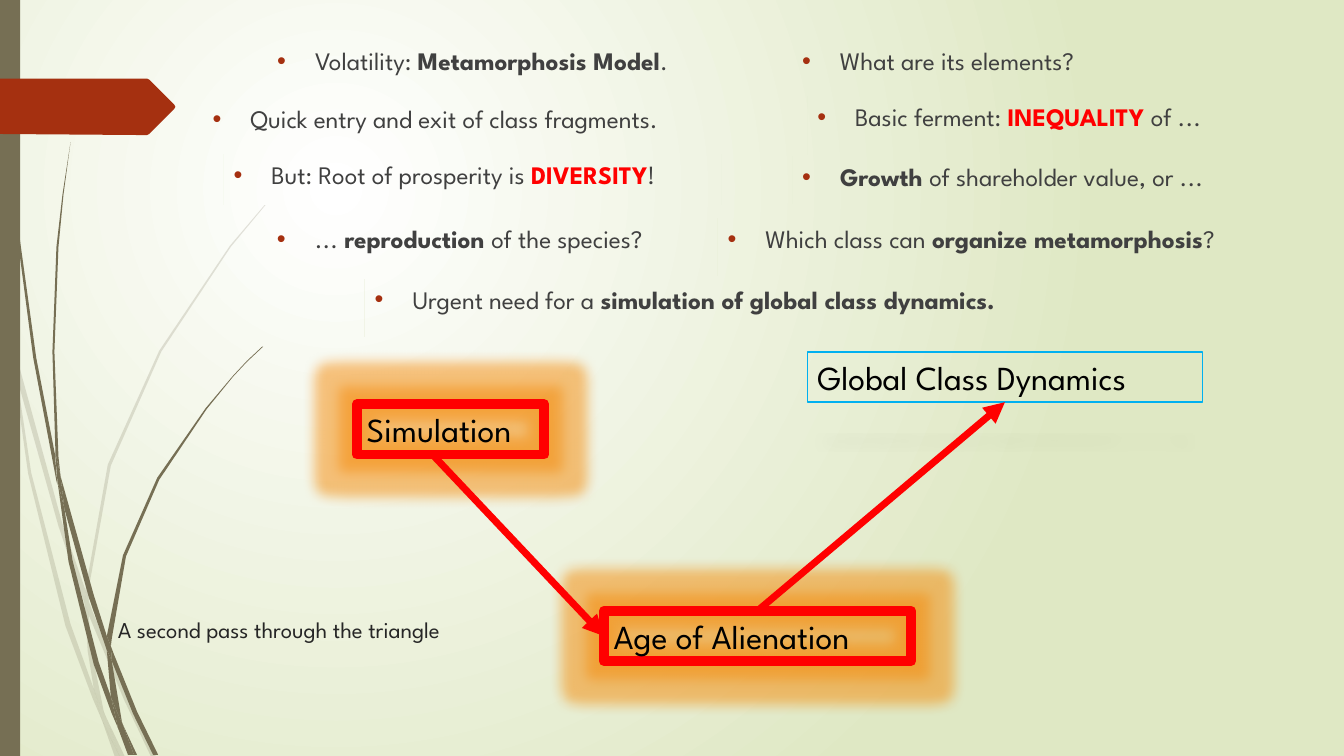
"""Build the class dynamics slide with its bullets, boxes and arrows."""
from dataclasses import dataclass

from pptx import Presentation
from pptx.dml.color import RGBColor
from pptx.enum.shapes import MSO_CONNECTOR, MSO_SHAPE
from pptx.enum.text import MSO_ANCHOR, MSO_AUTO_SIZE, PP_ALIGN
from pptx.oxml import parse_xml
from pptx.oxml.ns import nsdecls
from pptx.util import Pt

STRAIGHT = MSO_CONNECTOR.STRAIGHT
RECT = MSO_SHAPE.RECTANGLE
TOP = MSO_ANCHOR.TOP
LEFT = PP_ALIGN.LEFT
NO_FIT = MSO_AUTO_SIZE.NONE
GROW = MSO_AUTO_SIZE.SHAPE_TO_FIT_TEXT


@dataclass(frozen=True)
class Theme:
    font: str = "League Spartan"
    title: float = 16.2
    body: float = 18
    label: float = 24
    head: str = "262626"
    text: str = "404040"
    black: str = "000000"
    red: str = "FF0000"
    blue: str = "00B0F0"
    rust: str = "A53010"
    olive: str = "766F54"
    white: str = "FFFFFF"
    green: str = "DFE8C4"
    glow: str = "F58A0A"
    gold: str = "FFC000"


THEME = Theme()

LEAD = (190.8, 28.8, 343.4, 38.9), [("Volatility: ", ""), ("Metamorphosis Model", "b"), (".", "")]

PLAIN = [
    ((565.9, 28.8, 334.1, 41), [("What are its elements?", "")]),
    ((144.7, 70.6, 389.5, 33.1), [("Quick entry and exit of class fragments.", "")]),
]

COVER = [
    ((576.7, 69.1, 323.3, 41), [("Basic ferment: ", ""), ("INEQUALITY ", "br"), ("of ...", "")]),
    ((159.8, 110.2, 355.7, 36), [("But: Root of prosperity is ", ""), ("DIVERSITY", "br"), ("!", "")]),
    ((565.9, 111.6, 346.3, 33.8), [("Growth ", "b"), ("of shareholder value, or ...", "")]),
    ((190.8, 156.2, 328.3, 36), [("... ", ""), ("reproduction ", "b"), ("of the species?", "")]),
    ((512.6, 156.2, 440.6, 41), [("Which class can ", ""), ("organize metamorphosis", "b"), ("?", "")]),
    ((260.6, 199.4, 589, 41), [("Urgent need for a ", ""), ("simulation of global class dynamics.", "b")]),
]

UNIT = Pt(0.72)
PALE = [
    [(11, 350), (9, 322), (0, 282), (0, 299), (10, 344)],
    [(58, 522), (84, 599), (85, 586), (62, 520), (14, 345), (17, 376)],
    [(92, 607), (88, 596), (88, 610), (123, 694), (150, 751), (155, 751), (127, 692)],
    [(119, 751), (124, 751), (105, 711)],
    [(93, 683), (70, 619), (31, 469), (17, 376), (11, 350), (28, 470), (65, 621), (92, 693), (101, 714), (99, 707)],
    [(84, 599), (87, 646), (93, 683), (96, 692), (105, 711), (103, 706), (91, 646), (88, 610), (88, 608)],
    [(88, 584), (110, 462), (160, 349), (229, 245), (268, 198), (290, 175), (312, 154), (312, 153), (289, 175),
     (268, 197), (228, 244), (158, 348), (107, 461), (85, 584), (85, 586), (88, 596)],
    [(101, 714), (114, 751), (119, 751)],
    [(88, 608), (88, 610), (88, 596), (85, 586), (84, 599)],
    [(96, 692), (93, 683), (99, 707), (101, 714), (119, 751), (105, 711)],
]
DARK = [
    [(7, 110), (17, 233), (33, 355), (56, 477), (57, 481), (55, 457), (55, 453), (36, 355), (19, 232), (8, 109),
     (5, 48), (4, 0), (3, 0), (4, 48)],
    [(88, 592), (106, 645), (106, 633), (106, 631), (93, 590), (60, 472), (64, 505)],
    [(113, 649), (110, 641), (111, 656), (132, 708), (152, 749), (157, 749), (136, 706)],
    [(110, 691), (98, 657), (72, 556), (64, 505), (57, 477), (68, 557), (93, 659), (111, 708), (117, 722), (116, 717)],
    [(60, 472), (58, 453), (54, 349), (58, 245), (63, 193), (70, 141), (62, 193), (56, 245), (52, 349), (55, 449)],
    [(133, 749), (136, 749), (122, 719)],
    [(57, 477), (64, 505), (60, 472), (55, 449), (55, 453)],
    [(111, 633), (125, 552), (158, 476), (205, 406), (231, 374), (245, 359), (261, 344), (260, 344), (245, 358),
     (231, 373), (204, 405), (156, 474), (122, 551), (106, 631), (110, 641)],
    [(117, 722), (127, 749), (131, 749)],
    [(106, 645), (110, 691), (116, 706), (122, 719), (121, 716), (111, 656), (109, 651)],
    [(106, 645), (109, 651), (111, 656), (110, 641), (106, 631), (106, 633)],
    [(116, 706), (110, 691), (116, 717), (117, 722), (130, 749), (133, 749), (122, 719)],
]
TAG = [(0, 78), (146, 78), (148, 79), (173, 104), (174, 106), (173, 108), (148, 133), (146, 134), (136, 134), (0, 133)]


def rgb(hue):
    """Turn a hex string into a colour."""
    return RGBColor.from_string(hue)


def place(shape, box):
    """Move and size a shape, in points."""
    shape.left, shape.top, shape.width, shape.height = map(Pt, box)


def style(run, size, hue, bold=False):
    """Format one run."""
    run.font.name, run.font.size, run.font.bold = THEME.font, Pt(size), bold
    run.font.color.rgb = rgb(hue)


def paint(shape, hue, alpha=None):
    """Fill a shape flat, without line or shadow."""
    shape.shadow.inherit = False
    shape.fill.solid()
    shape.fill.fore_color.rgb = rgb(hue)
    shape.line.fill.background()
    if alpha:
        tint = shape._element.xpath("./p:spPr/a:solidFill/a:srgbClr")[0]
        tint.append(parse_xml(f'<a:alpha {nsdecls("a")} val="{alpha * 1000}"/>'))


def outline(shapes, dots, hue, alpha=None):
    """Draw a closed outline through the dots."""
    pen = shapes.build_freeform(*dots[0], scale=UNIT)
    pen.add_line_segments(dots[1:], close=True)
    paint(pen.convert_to_shape(), hue, alpha)


def backdrop(slide):
    """Give the slide its round gradient."""
    fill = slide.background.fill
    fill.gradient()
    for stop, hue in zip(fill.gradient_stops, (THEME.white, THEME.green)):
        stop.color.rgb = rgb(hue)
    lin = slide._element.xpath(".//p:bg//a:lin")[0]
    lin.getparent().replace(lin, parse_xml(
        f'<a:path {nsdecls("a")} path="circle">'
        '<a:fillToRect l="50000" t="50000" r="100000" b="100000"/></a:path>'))


def decor(slide):
    """Draw the wisps, the side bar and the tag."""
    for wisps, alpha in ((PALE, 20), (DARK, None)):
        group = slide.shapes.add_group_shape()
        for dots in wisps:
            outline(group.shapes, dots, THEME.olive, alpha)
    paint(slide.shapes.add_shape(RECT, 0, 0, Pt(14.4), Pt(540)), THEME.olive)
    outline(slide.shapes, TAG, THEME.rust)


def bullet(shape, parts):
    """Write one bulleted line of mixed runs."""
    frame = shape.text_frame
    frame.word_wrap, frame.auto_size, frame.vertical_anchor = True, NO_FIT, TOP
    para = frame.paragraphs[0]
    para.alignment, para.space_before = LEFT, Pt(10)
    props = para._p.get_or_add_pPr()
    props.set("marL", str(Pt(27)))
    props.set("indent", str(-Pt(27)))
    props.append(parse_xml(f'<a:buClr {nsdecls("a")}><a:srgbClr val="{THEME.rust}"/></a:buClr>'))
    props.append(parse_xml(f'<a:buFont {nsdecls("a")} typeface="Arial"/>'))
    props.append(parse_xml(f'<a:buChar {nsdecls("a")} char="•"/>'))
    for text, mark in parts:
        run = para.add_run()
        run.text = text
        style(run, THEME.body, THEME.red if "r" in mark else THEME.text, "b" in mark)


def point(slide, box, parts, cover=False):
    """Add a bullet box, filled with the backdrop if it covers."""
    shape = slide.shapes.add_textbox(*map(Pt, box))
    if cover:
        shape._element.set("useBgFill", "1")
        for bare in shape._element.xpath("./p:spPr/a:noFill"):
            bare.getparent().remove(bare)
    bullet(shape, parts)


def shade(hue, alpha, blur, dist, turn, extra=""):
    """Return the XML of an outer shadow."""
    return (f'<a:outerShdw blurRad="{Pt(blur)}" dist="{Pt(dist)}" dir="{turn * 60000}" {extra} rotWithShape="0">'
            f'<a:srgbClr val="{hue}"><a:alpha val="{alpha * 1000}"/></a:srgbClr></a:outerShdw>')


def label(slide, box, text, hue, width, effect):
    """Add a framed label with an effect."""
    shape = slide.shapes.add_textbox(*map(Pt, box))
    shape.line.color.rgb, shape.line.width = rgb(hue), Pt(width)
    shape._element.spPr.append(parse_xml(f'<a:effectLst {nsdecls("a")}>{effect}</a:effectLst>'))
    frame = shape.text_frame
    frame.text = text
    frame.word_wrap, frame.auto_size = False, GROW
    style(frame.paragraphs[0].runs[0], THEME.label, THEME.black)
    return shape


def arrow(slide, start, goal, side):
    """Draw a red arrow from a spot to a side of a label."""
    line = slide.shapes.add_connector(STRAIGHT, *map(Pt, start), 0, 0)
    line.end_connect(goal, side)
    line.line.color.rgb, line.line.width = rgb(THEME.red), Pt(5)
    line.line._get_or_add_ln().append(parse_xml(f'<a:tailEnd {nsdecls("a")} type="triangle"/>'))
    line._element.spPr.append(parse_xml(f'<a:effectLst {nsdecls("a")}/>'))
    return line


def main():
    """Build and save the slide."""
    deck = Presentation()
    deck.slide_width, deck.slide_height = Pt(960), Pt(540)
    slide = deck.slides.add_slide(deck.slide_layouts[1])
    backdrop(slide)
    decor(slide)

    title, body = slide.shapes.title, slide.placeholders[1]
    for holder in (title, body):
        slide.shapes._spTree.append(holder._element)
    place(title, (77, 436.3, 299.5, 38.9))
    frame = title.text_frame
    frame.text = "A second pass through the triangle"
    frame.vertical_anchor, frame.auto_size = TOP, NO_FIT
    frame.paragraphs[0].alignment = LEFT
    style(frame.paragraphs[0].runs[0], THEME.title, THEME.head)
    place(body, LEAD[0])
    bullet(body, LEAD[1])

    halo = (f'<a:glow rad="{Pt(18)}"><a:srgbClr val="{THEME.glow}"><a:alpha val="50000"/></a:srgbClr></a:glow>'
            + shade(THEME.gold, 20, 6, 0, 225))
    cast = shade(THEME.black, 15, 12, 25, 90, 'sx="90000" sy="-19000"')
    label(slide, (254.9, 288.7, 133.9, 36), "Simulation", THEME.red, 7, halo)
    world = label(slide, (576.7, 251.3, 282.2, 36), "Global Class Dynamics", THEME.blue, 1.25, cast)
    age = label(slide, (431.3, 436.3, 219.6, 36), "Age of Alienation", THEME.red, 7, halo)

    for box, parts in PLAIN:
        point(slide, box, parts)
    for box, parts in COVER:
        point(slide, box, parts, cover=True)
    arrow(slide, (541.1, 436.3), world, 2).begin_connect(age, 0)
    arrow(slide, (308.9, 324.7), age, 1)
    deck.save("out.pptx")


if __name__ == "__main__":
    main()
